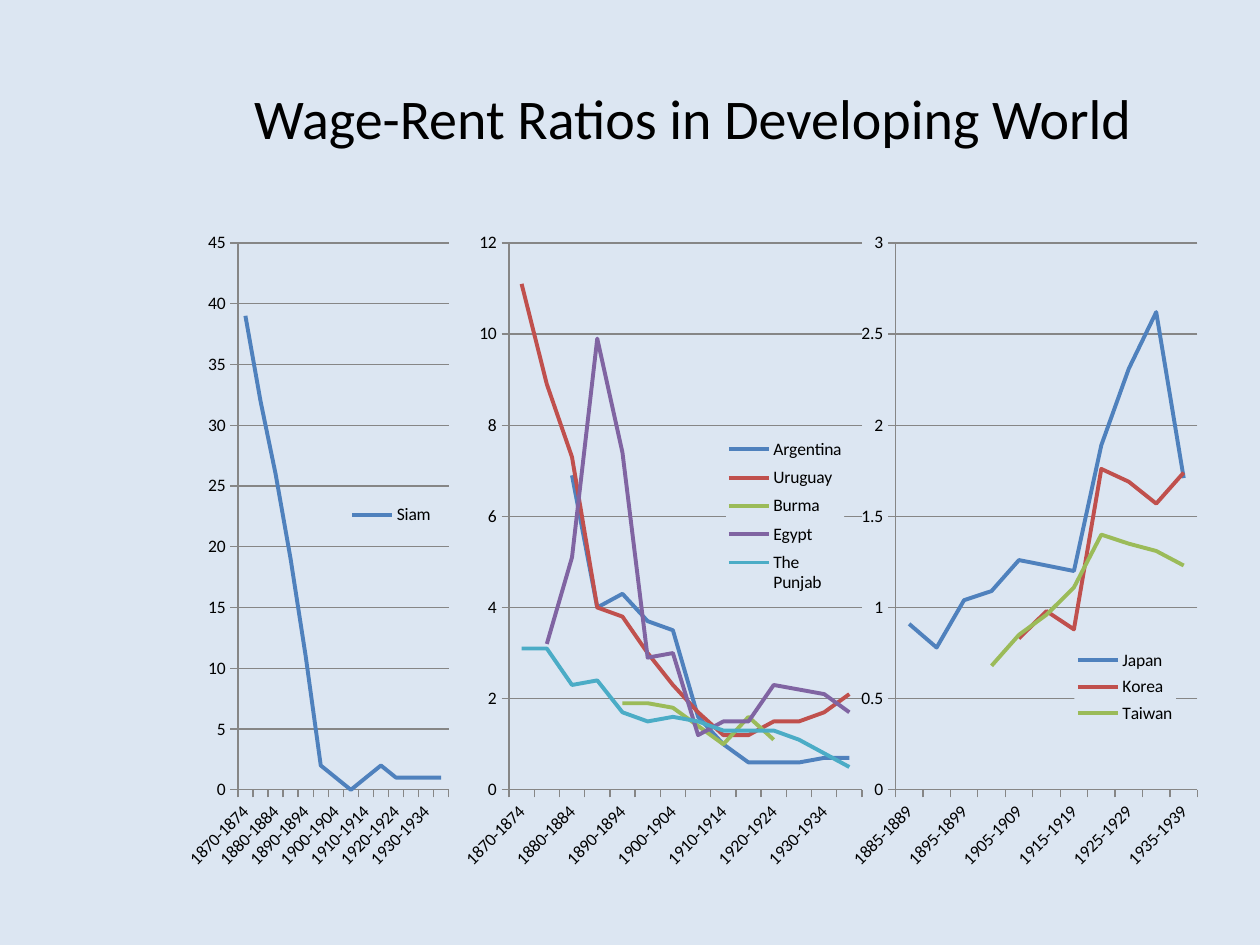
"""Builds a slide with three line charts of wage-rent ratios."""
from dataclasses import dataclass

from pptx import Presentation, util as u
from pptx.chart.data import CategoryChartData
from pptx.dml.color import RGBColor
from pptx.enum import chart as ch, text
from pptx.oxml import parse_xml
from pptx.oxml.ns import nsdecls, qn

WIDTH, HEIGHT = 10, 7.5


@dataclass(frozen=True)
class Theme:
    """Colours, font and sizes of the slide."""
    font: str = "Calibri"
    title: int = 32
    label: int = 10
    line: float = 2.25
    axis: float = 0.75
    back: str = "DCE6F2"
    ink: str = "000000"
    grid: str = "868686"
    series: tuple = ("4F81BD", "C0504D", "9BBB59", "8064A2", "4BACC6")


THEME = Theme()

LATIN = {
    "Argentina": [None, None, 6.9, 4, 4.3, 3.7, 3.5, 1.6, 1, 0.6, 0.6, 0.6, 0.7, 0.7],
    "Uruguay": [11.1, 8.9, 7.3, 4, 3.8, 3, 2.3, 1.7, 1.2, 1.2, 1.5, 1.5, 1.7, 2.1],
    "Burma": [None] * 4 + [1.9, 1.9, 1.8, 1.4, 1, 1.6, 1.1] + [None] * 3,
    "Egypt": [None, 3.2, 5.1, 9.9, 7.4, 2.9, 3, 1.2, 1.5, 1.5, 2.3, 2.2, 2.1, 1.7],
    "The Punjab": [3.1, 3.1, 2.3, 2.4, 1.7, 1.5, 1.6, 1.5, 1.3, 1.3, 1.3, 1.1, 0.8, 0.5],
}
SIAM = {"Siam": [39, 32, 26, 19, 11, 2, 1, 0, 1, 2, 1, 1, 1, 1]}
EAST_ASIA = {
    "Japan": [0.91, 0.78, 1.04, 1.09, 1.26, 1.23, 1.2, 1.89, 2.31, 2.62, 1.71],
    "Korea": [None] * 4 + [0.83, 0.98, 0.88, 1.76, 1.69, 1.57, 1.74],
    "Taiwan": [None] * 3 + [0.68, 0.85, 0.96, 1.11, 1.4, 1.35, 1.31, 1.23],
}


def rgb(value):
    """Return a colour from its hex value."""
    return RGBColor.from_string(value)


def style_font(font, size):
    """Apply the theme font in the given size."""
    font.name, font.size, font.bold = THEME.font, u.Pt(size), False
    font.color.rgb = rgb(THEME.ink)


def style_line(line, color, width):
    """Set the colour and width of a line."""
    line.color.rgb, line.width = rgb(color), u.Pt(width)


def periods(first):
    """Return five-year periods from first up to 1939."""
    return [f"{y}-{y + 4}" for y in range(first, 1940, 5)]


def make_layout(box, inner=False):
    """Return a manual chart layout for a box of shares."""
    target = '<c:layoutTarget val="inner"/>' if inner else ""
    modes = '<c:xMode val="edge"/><c:yMode val="edge"/>'
    sizes = "".join(f'<c:{k} val="{v}"/>' for k, v in zip("xywh", box))
    return parse_xml(f'<c:layout {nsdecls("c")}><c:manualLayout>{target}{modes}'
                     f'{sizes}</c:manualLayout></c:layout>')


def make_fill(fill):
    """Return chart shape properties with a fill and no outline."""
    return parse_xml(f'<c:spPr {nsdecls("c", "a")}>{fill}'
                     '<a:ln><a:noFill/></a:ln></c:spPr>')


def place_parts(chart, plot_box, legend_box):
    """Place the plot area and the filled legend over it."""
    chart.has_legend = True
    chart.legend.position = ch.XL_LEGEND_POSITION.RIGHT
    chart.legend.include_in_layout = False
    legend, area = chart.legend._element, chart._chartSpace.chart.plotArea
    for parent in (legend, area):
        for old in parent.findall(qn("c:layout")):
            parent.remove(old)
    area.insert(0, make_layout(plot_box, inner=True))
    legend.find(qn("c:legendPos")).addnext(make_layout(legend_box))
    legend.find(qn("c:overlay")).addnext(make_fill(
        f'<a:solidFill><a:srgbClr val="{THEME.back}"/></a:solidFill>'))
    chart._chartSpace.chart.addnext(make_fill("<a:noFill/>"))


def style_axes(chart, top, step):
    """Style both axes, with slanted labels on every second period."""
    cat, val = chart.category_axis, chart.value_axis
    val.minimum_scale, val.maximum_scale, val.major_unit = 0, top, step
    val.has_major_gridlines = True
    val.tick_labels.number_format = "General"
    val.tick_labels.number_format_is_linked = False
    for axis in (cat, val):
        axis.major_tick_mark = ch.XL_TICK_MARK.OUTSIDE
        axis.minor_tick_mark = ch.XL_TICK_MARK.NONE
        style_font(axis.tick_labels.font, THEME.label)
        style_line(axis.format.line, THEME.grid, THEME.axis)
    style_line(val.major_gridlines.format.line, THEME.grid, THEME.axis)
    body = cat._element.find(qn("c:txPr")).find(qn("a:bodyPr"))
    body.set("rot", "-2700000")
    body.set("vert", "horz")
    cat._element.find(qn("c:noMultiLvlLbl")).addprevious(
        parse_xml(f'<c:tickLblSkip {nsdecls("c")} val="2"/>'))


def add_line_chart(s, left, width, first, data, scale, plot_x, legend_box):
    """Add one line chart; left and width are shares of the slide."""
    cd = CategoryChartData()
    cd.categories = periods(first)
    for name, values in data.items():
        cd.add_series(name, values)
    frame = s.shapes.add_chart(
        ch.XL_CHART_TYPE.LINE, u.Inches(left * WIDTH), u.Inches(1.75),
        u.Inches(width * WIDTH), u.Inches(0.7 * HEIGHT), cd)
    chart = frame.chart
    chart.has_title = False
    style_font(chart.font, THEME.label)
    chart.plots[0].vary_by_categories = False
    for series, color in zip(chart.plots[0].series, THEME.series):
        series.smooth = False
        series.marker.style = ch.XL_MARKER_STYLE.NONE
        style_line(series.format.line, color, THEME.line)
    style_axes(chart, *scale)
    x, w = plot_x
    place_parts(chart, (x, 0.034, w, 0.827), legend_box)


def add_title(s, words):
    """Add the centred title."""
    sp = s.shapes.add_textbox(*(u.Inches(v) for v in (
        0.15 * WIDTH, 0.04 * HEIGHT, 0.8 * WIDTH, 0.168 * HEIGHT)))
    tf = sp.text_frame
    tf.word_wrap, tf.vertical_anchor = True, text.MSO_ANCHOR.MIDDLE
    p = tf.paragraphs[0]
    p.text, p.alignment = words, text.PP_ALIGN.CENTER
    style_font(p.font, THEME.title)


def main():
    """Build and save the slide."""
    prs = Presentation()
    prs.slide_width, prs.slide_height = u.Inches(WIDTH), u.Inches(HEIGHT)
    s = prs.slides.add_slide(prs.slide_layouts[6])
    s.background.fill.solid()
    s.background.fill.fore_color.rgb = rgb(THEME.back)
    add_title(s, "Wage-Rent Ratios in Developing World")
    add_line_chart(s, 0.358, 0.442, 1870, LATIN, (12, 2), (0.104, 0.634),
                   (0.494, 0.318, 0.212, 0.257))
    add_line_chart(s, 0.142, 0.3, 1870, SIAM, (45, 5), (0.156, 0.558),
                   (0.447, 0.42, 0.23, 0.05))
    add_line_chart(s, 0.667, 0.383, 1885, EAST_ASIA, (3, 0.5), (0.114, 0.626),
                   (0.485, 0.64, 0.21, 0.13))
    prs.save("out.pptx")


if __name__ == "__main__":
    main()
